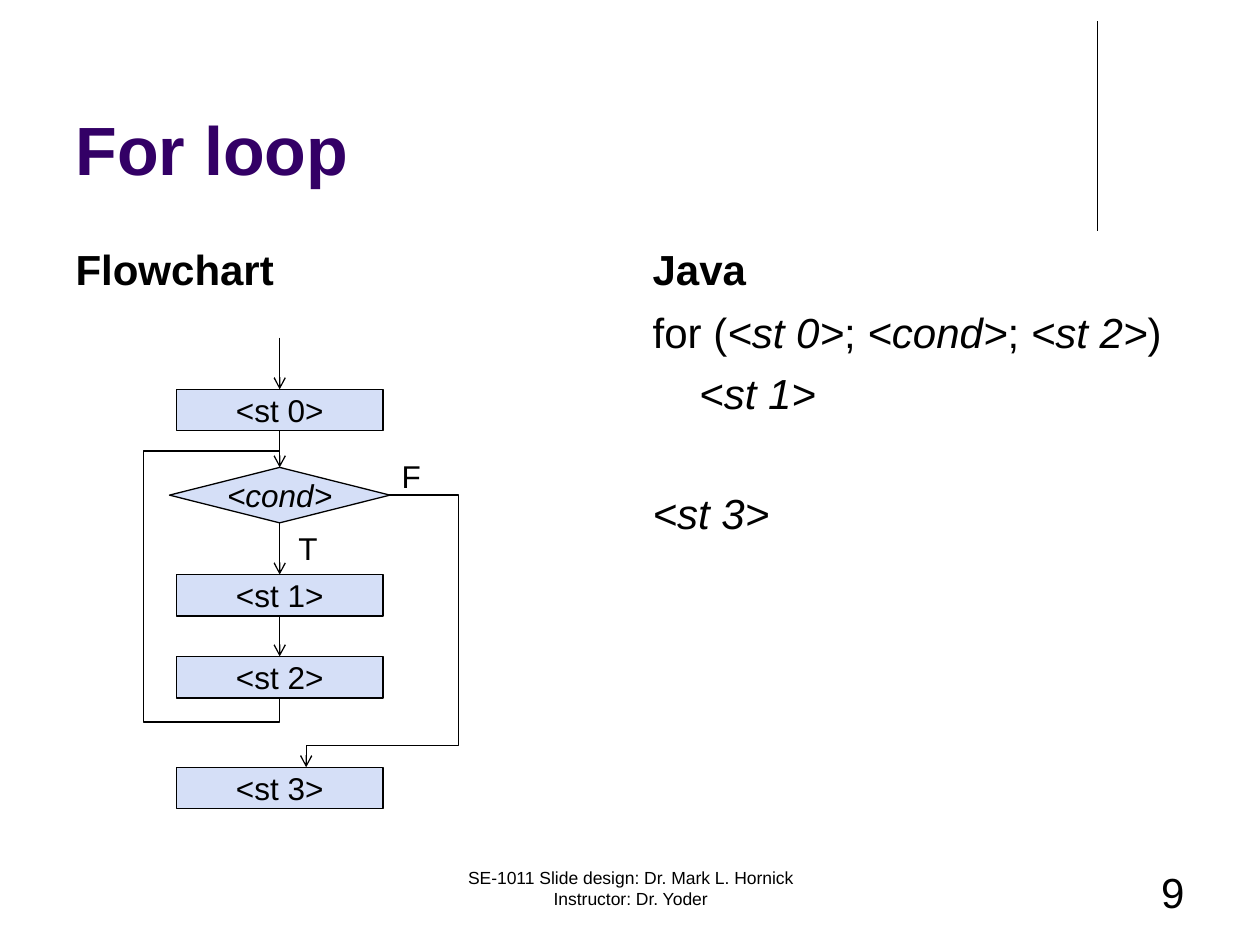
"""Build a slide that sets a for-loop flowchart beside its Java form."""
from lxml.etree import SubElement
from pptx import Presentation
from pptx.dml.color import RGBColor
from pptx.enum.shapes import MSO_CONNECTOR, MSO_SHAPE
from pptx.enum.text import MSO_ANCHOR, MSO_AUTO_SIZE, PP_ALIGN
from pptx.oxml.ns import qn
from pptx.util import Inches, Pt

BLACK = RGBColor(0, 0, 0)
PURPLE = RGBColor(0x33, 0x00, 0x66)
PALE_BLUE = RGBColor(0xD5, 0xDF, 0xF7)
LEFT_COLUMN, RIGHT_COLUMN, COLUMN_WIDTH = 0.5, 5.08, 4.42
HEADING_TOP, CODE_TOP, FOOTER_TOP = 1.68, 2.38, 6.83
AXIS, STEP_WIDTH, STEP_HEIGHT = 2.22, 1.64, 0.33


def style_line(item, arrow=False):
    item.line.color.rgb = BLACK
    item.line.width = Pt(0.75)
    properties = item._element.spPr
    if arrow:
        SubElement(properties.find(qn("a:ln")), qn("a:tailEnd"), type="arrow")
    if properties.find(qn("a:effectLst")) is None:
        SubElement(properties, qn("a:effectLst"))


def style_text(paragraph, size, color=BLACK, bold=False, align=PP_ALIGN.LEFT):
    paragraph.alignment = align
    paragraph.font.name = "Arial"
    paragraph.font.size = Pt(size)
    paragraph.font.color.rgb = color
    paragraph.font.bold = bold


presentation = Presentation()
presentation.slide_width, presentation.slide_height = Inches(10), Inches(7.5)
slide = presentation.slides.add_slide(presentation.slide_layouts[4])
shapes = slide.shapes
title, flow_heading, unused, java_heading, code = slide.placeholders
unused._element.getparent().remove(unused._element)

divider = shapes.add_connector(
    MSO_CONNECTOR.STRAIGHT, Inches(8.71), Inches(0.17), Inches(8.71), Inches(1.83))
style_line(divider)

for part, text, left, top, width, height, size, color in (
    (title, "For loop", LEFT_COLUMN, 0.3, 9, 1.25, 39, PURPLE),
    (flow_heading, "Flowchart", LEFT_COLUMN, HEADING_TOP, COLUMN_WIDTH, 0.7, 24, BLACK),
    (java_heading, "Java", RIGHT_COLUMN, HEADING_TOP, COLUMN_WIDTH, 0.7, 24, BLACK),
):
    part.left, part.top, part.width, part.height = map(Inches, (left, top, width, height))
    frame = part.text_frame
    frame.text = text
    frame.auto_size = MSO_AUTO_SIZE.NONE
    frame.vertical_anchor = MSO_ANCHOR.BOTTOM
    frame.paragraphs[0].space_before = Pt(0)
    style_text(frame.paragraphs[0], size, color, bold=True)

code.left, code.top = Inches(RIGHT_COLUMN), Inches(CODE_TOP)
code.width, code.height = Inches(COLUMN_WIDTH), Inches(4.32)
code.text_frame.auto_size = MSO_AUTO_SIZE.NONE
code_lines = (
    (0, ("for (", "<st 0>", "; ", "<cond>", "; ", "<st 2>", ")")),
    (6, ("    <st 1>",)),
    (40, ("<st 3>",)),
)
for number, (gap, pieces) in enumerate(code_lines):
    line = code.text_frame.paragraphs[0] if number == 0 else code.text_frame.add_paragraph()
    properties = line._p.get_or_add_pPr()
    properties.set("marL", "0")
    properties.set("indent", "0")
    SubElement(properties, qn("a:buNone"))
    line.space_before = Pt(gap)
    style_text(line, 24)
    for piece in pieces:
        run = line.add_run()
        run.text = piece
        run.font.italic = "<" in piece

for text, left, width, size, align in (
    ("SE-1011 Slide design: Dr. Mark L. Hornick Instructor: Dr. Yoder",
     3.42, 3.17, 10, PP_ALIGN.CENTER),
    ("9", 7.17, 2.33, 24, PP_ALIGN.RIGHT),
):
    footer = shapes.add_textbox(*map(Inches, (left, FOOTER_TOP, width, 0.5)))
    footer.text_frame.word_wrap = True
    footer.text_frame.text = text
    style_text(footer.text_frame.paragraphs[0], size, align=align)

steps = {}
for text, preset, top, width, height in (
    ("<st 0>", MSO_SHAPE.RECTANGLE, 3.09, STEP_WIDTH, STEP_HEIGHT),
    ("<cond>", MSO_SHAPE.FLOWCHART_DECISION, 3.71, 1.75, 0.44),
    ("<st 1>", MSO_SHAPE.RECTANGLE, 4.56, STEP_WIDTH, STEP_HEIGHT),
    ("<st 2>", MSO_SHAPE.RECTANGLE, 5.21, STEP_WIDTH, STEP_HEIGHT),
    ("<st 3>", MSO_SHAPE.RECTANGLE, 6.09, STEP_WIDTH, STEP_HEIGHT),
):
    step = shapes.add_shape(preset, *map(Inches, (AXIS - width / 2, top, width, height)))
    step.shadow.inherit = False
    step.fill.solid()
    step.fill.fore_color.rgb = PALE_BLUE
    style_line(step)
    step.text_frame.word_wrap = False
    step.text_frame.vertical_anchor = MSO_ANCHOR.MIDDLE
    step.text_frame.text = text
    style_text(step.text_frame.paragraphs[0], 18, align=PP_ALIGN.CENTER)
    step.text_frame.paragraphs[0].font.italic = text == "<cond>"
    steps[text] = step

for source, target in (
    (None, "<st 0>"), ("<st 0>", "<cond>"), ("<cond>", "<st 1>"), ("<st 1>", "<st 2>"),
):
    flow = shapes.add_connector(
        MSO_CONNECTOR.STRAIGHT, Inches(AXIS), Inches(2.68), Inches(AXIS), Inches(3.09))
    if source:
        flow.begin_connect(steps[source], 2)
    flow.end_connect(steps[target], 0)
    style_line(flow, arrow=True)

for text, left, top in (("T", 2.27, 4.15), ("F", 3.09, 3.58)):
    branch = shapes.add_textbox(*map(Inches, (left, top, 0.23, 0.26)))
    branch.text_frame.word_wrap = False
    branch.text_frame.auto_size = MSO_AUTO_SIZE.SHAPE_TO_FIT_TEXT
    branch.text_frame.text = text
    style_text(branch.text_frame.paragraphs[0], 18)

exit_route = ((3.09, 3.93), (3.64, 3.93), (3.64, 5.92), (2.43, 5.92), (2.43, 6.09))
repeat_route = ((AXIS, 5.54), (AXIS, 5.73), (1.14, 5.73), (1.14, 3.58), (AXIS, 3.58))
for route, arrow in ((exit_route, True), (repeat_route, False)):
    start, *corners = [(Inches(x), Inches(y)) for x, y in route]
    builder = shapes.build_freeform(*start)
    builder.add_line_segments(corners, close=False)
    bend = builder.convert_to_shape()
    bend.shadow.inherit = False
    bend.fill.background()
    style_line(bend, arrow)

presentation.save("out.pptx")
